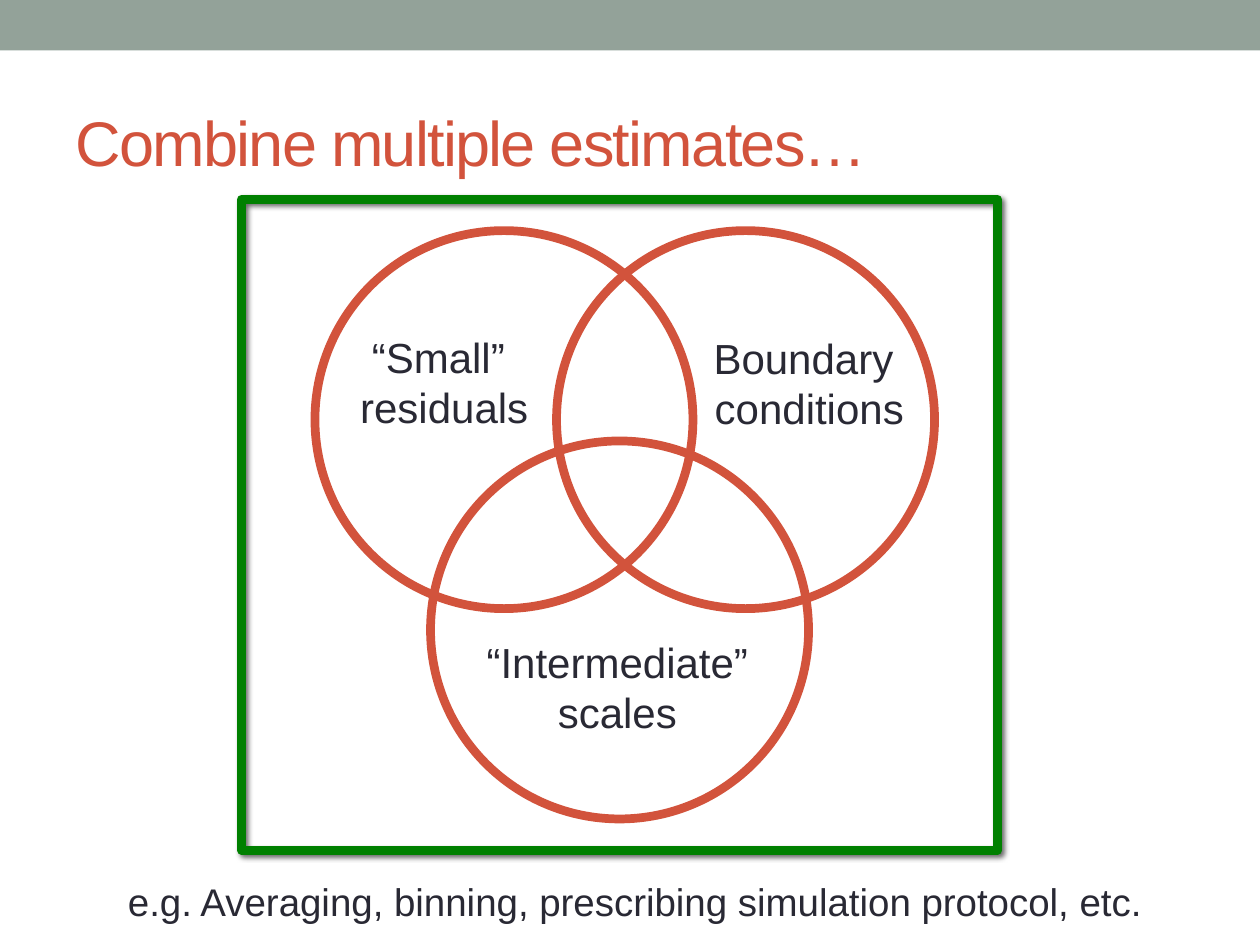
from lxml import etree
from pptx import Presentation
from pptx.dml.color import RGBColor
from pptx.enum.shapes import MSO_SHAPE
from pptx.enum.text import MSO_ANCHOR, MSO_AUTO_SIZE, PP_ALIGN
from pptx.oxml import parse_xml
from pptx.oxml.ns import nsdecls, qn
from pptx.util import Cm, Pt

RECT, OVAL = MSO_SHAPE.RECTANGLE, MSO_SHAPE.OVAL
LEFT, MID = PP_ALIGN.LEFT, PP_ALIGN.CENTER
CENTRE = MSO_ANCHOR.MIDDLE
GROW = MSO_AUTO_SIZE.SHAPE_TO_FIT_TEXT

FONT = "Arial"
COLORS = {"band": "93A299", "accent": "D2533C", "text": "292934",
          "frame": "008000", "shade": "000000"}


def rgb(name):
    return RGBColor.from_string(COLORS[name])


def style(frame, size, color, align):
    for para in frame.paragraphs:
        para.alignment = align
        for run in para.runs:
            run.font.name = FONT
            run.font.size = Pt(size)
            run.font.color.rgb = rgb(color)


def add_band(slide, width):
    band = slide.shapes.add_shape(RECT, 0, 0, width, Cm(1.02))
    band.shadow.inherit = False
    band.fill.solid()
    band.fill.fore_color.rgb = rgb("band")
    band.line.fill.background()


def add_title(slide, text):
    title = slide.shapes.title
    title.left, title.top = Cm(1.27), Cm(1.48)
    title.width, title.height = Cm(22.86), Cm(2.74)
    frame = title.text_frame
    frame.text = text
    frame.vertical_anchor = CENTRE
    style(frame, 36, "accent", LEFT)
    # Tighten the letters by one point
    frame.paragraphs[0].runs[0].font._element.set("spc", "-100")


def add_ring(slide, kind, box, color):
    ring = slide.shapes.add_shape(kind, *[Cm(n) for n in box])
    ring.shadow.inherit = False
    ring.fill.background()
    ring.line.color.rgb = rgb(color)
    ring.line.width = Pt(5)
    return ring


def add_shade(shape):
    props = shape._element.spPr
    etree.SubElement(props.find(qn("a:ln")), qn("a:round"))
    props.find(qn("a:effectLst")).append(parse_xml(
        f'<a:outerShdw {nsdecls("a")} blurRad="{Pt(3)}" dist="{Pt(2)}" '
        f'dir="2700000" rotWithShape="0"><a:srgbClr val="{COLORS["shade"]}">'
        '<a:alpha val="60000"/></a:srgbClr></a:outerShdw>'))


def add_label(slide, text, box, size=24, align=MID):
    label = slide.shapes.add_textbox(*[Cm(n) for n in box])
    frame = label.text_frame
    frame.word_wrap = False
    frame.auto_size = GROW
    frame.text = text
    style(frame, size, "text", align)


def main():
    deck = Presentation()
    deck.slide_width, deck.slide_height = Cm(25.4), Cm(19.05)
    slide = deck.slides.add_slide(deck.slide_layouts[5])

    # Heading
    add_band(slide, deck.slide_width)
    add_title(slide, "Combine multiple estimates…")

    # Three overlapping circles
    side = 7.62
    for left, top in ((6.35, 4.65), (11.22, 4.65), (8.68, 8.89)):
        add_ring(slide, OVAL, (left, top, side, side), "accent")

    # Circle labels
    for text, left, top, width in (
            ("“Small” \nresiduals", 6.99, 6.56, 3.93),
            ("“Intermediate”\nscales", 9.53, 12.7, 5.83),
            ("Boundary \nconditions", 14.13, 6.58, 4.37)):
        add_label(slide, text, (left, top, width, 2.31))

    # Frame and caption
    frame = add_ring(slide, RECT, (4.87, 4.02, 15.24, 13.12), "frame")
    add_shade(frame)
    add_label(slide, "e.g. Averaging, binning, prescribing simulation "
              "protocol, etc.", (2.33, 17.57, 21, 1.2), 22, LEFT)

    deck.save("out.pptx")


if __name__ == "__main__":
    main()
